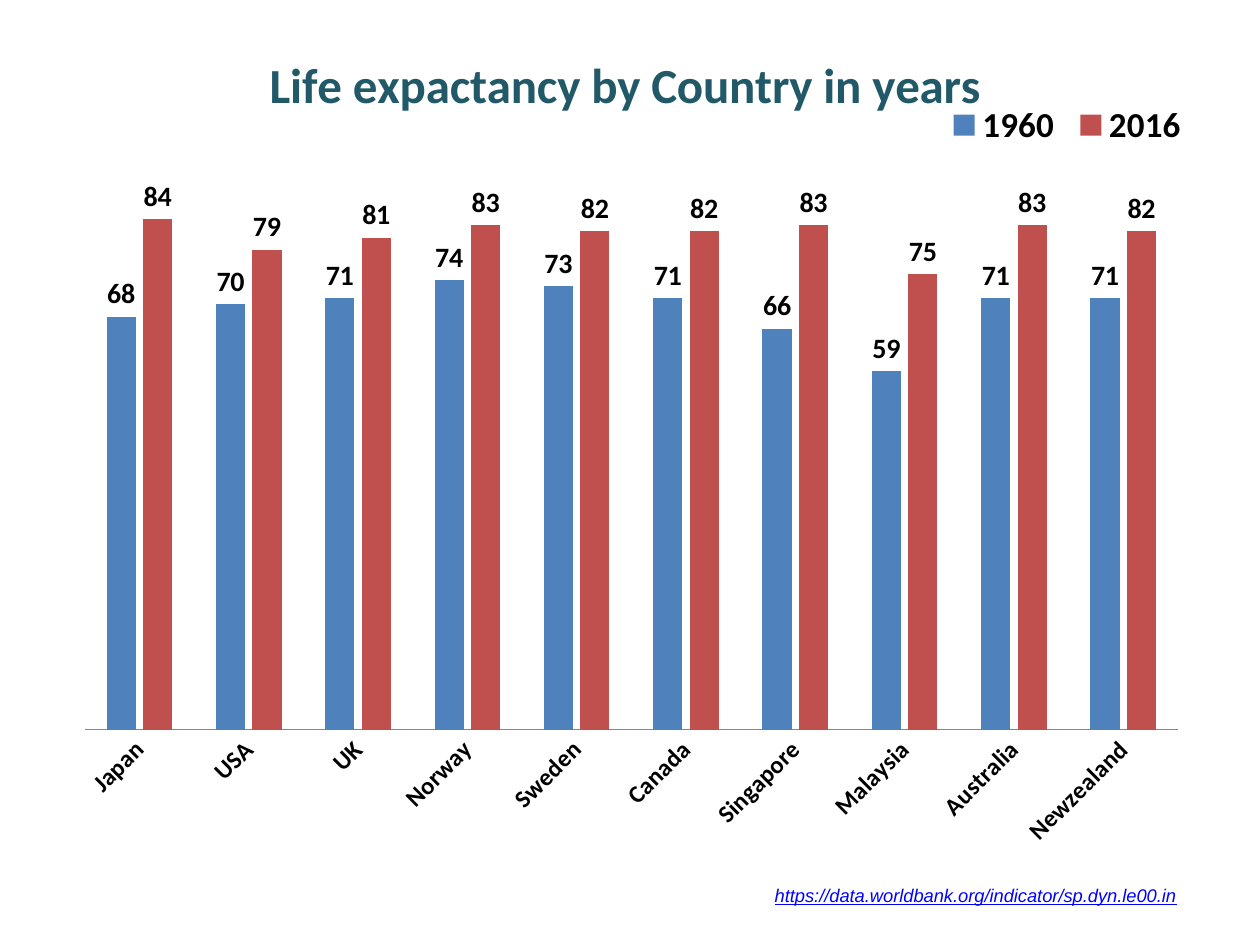
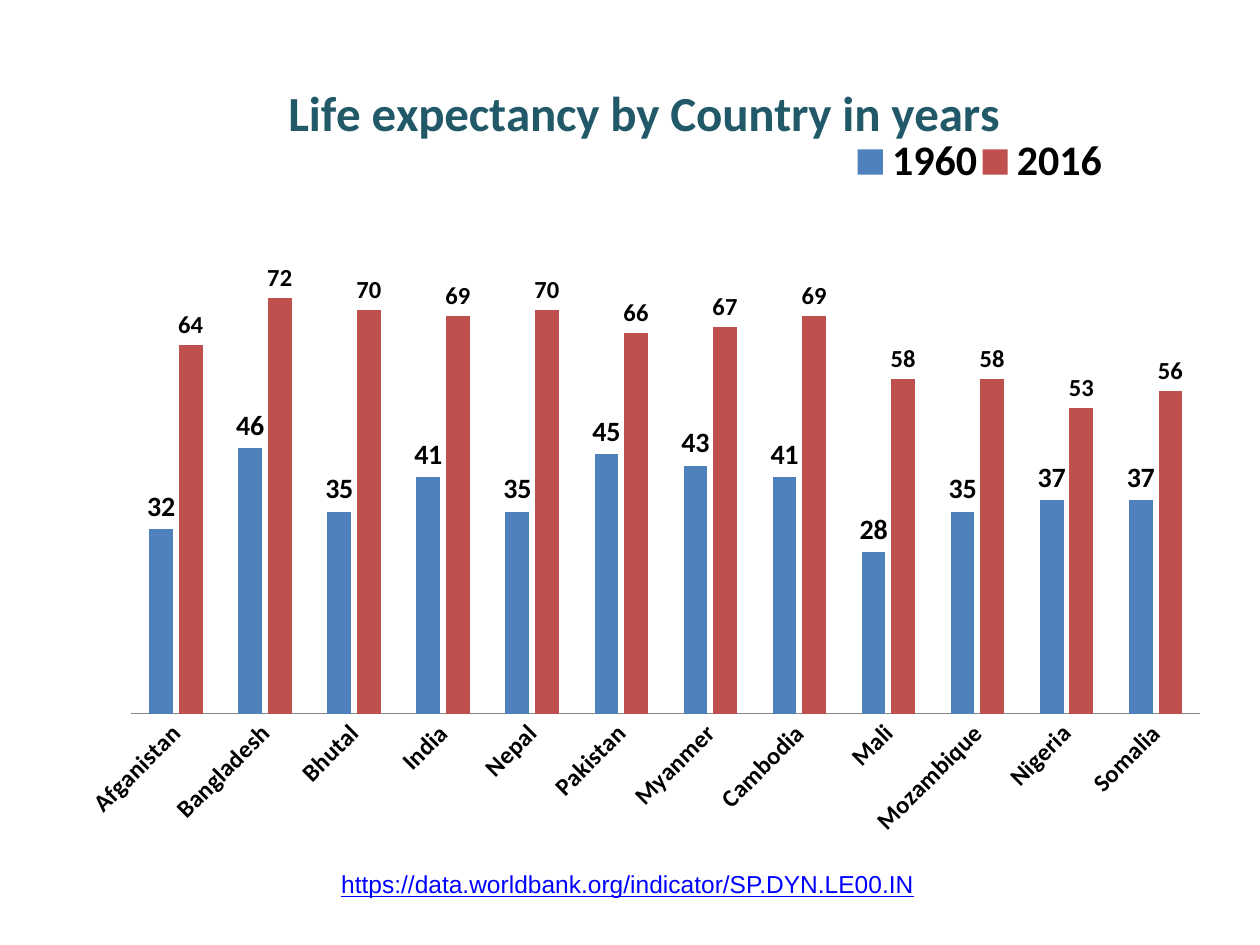
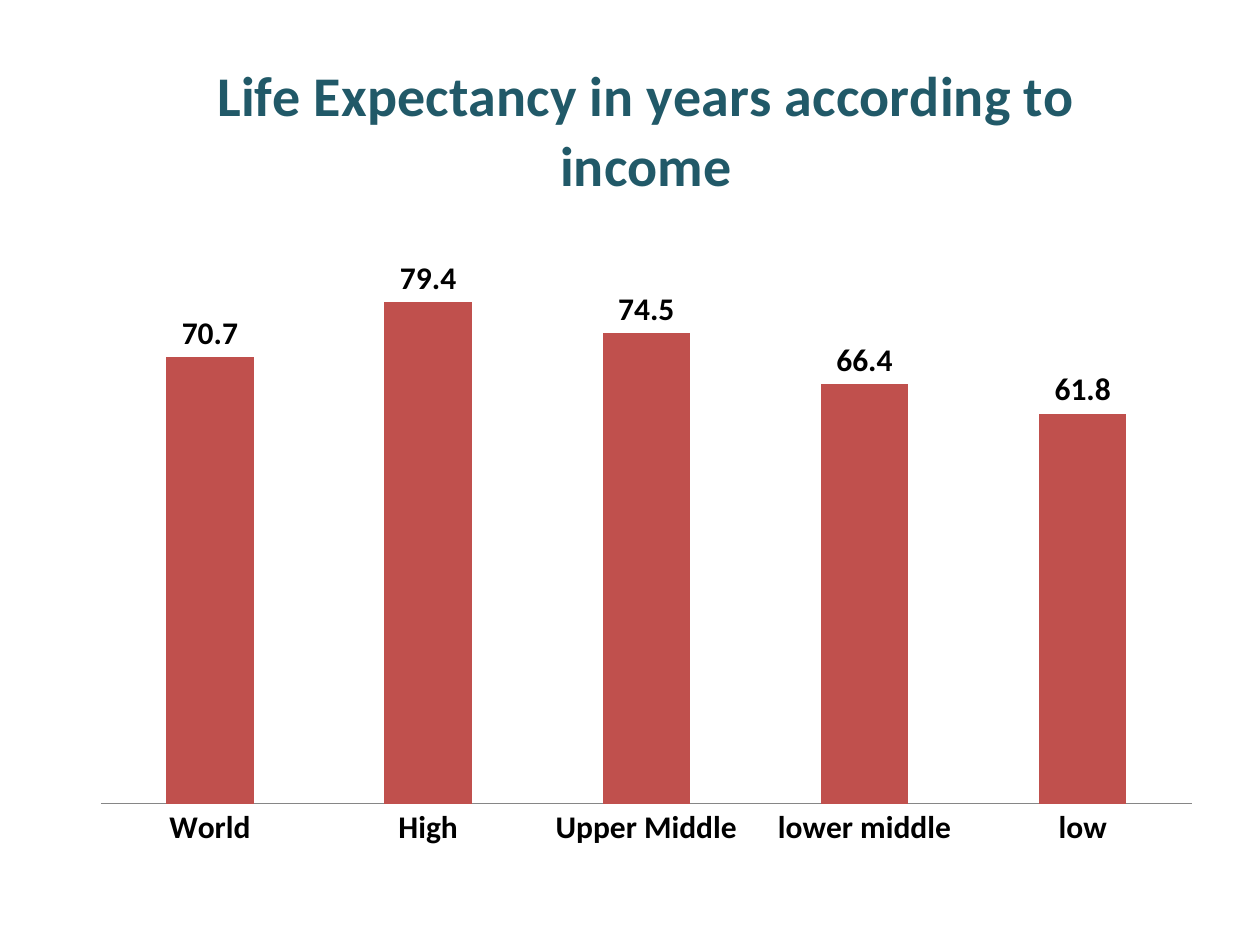
from lxml import etree
from pptx import Presentation
from pptx.chart.data import CategoryChartData
from pptx.dml.color import RGBColor
from pptx.enum.chart import (XL_CHART_TYPE, XL_LABEL_POSITION,
                             XL_LEGEND_POSITION, XL_TICK_MARK)
from pptx.oxml.ns import qn
from pptx.util import Inches, Pt

COLUMNS = XL_CHART_TYPE.COLUMN_CLUSTERED
ABOVE_BAR = XL_LABEL_POSITION.OUTSIDE_END
LEGEND_TOP = XL_LEGEND_POSITION.TOP
NO_TICKS = XL_TICK_MARK.NONE

BLUE, RED, TEAL = "4F81BD", "C0504D", "215968"
BLACK, GREY, LINK_BLUE = "000000", "868686", "0000FF"
CHART_FONT, SOURCE_FONT = "Calibri", "Arial"
BLANK_LAYOUT = 6

# Content: "at" is in inches; "plot" and "legend" are fractions of the chart.
# Each series is (name, values, colour, label size).
SLIDES = [
    {
        "title": "Life expactancy by Country in years", "title_size": 28,
        "at": (0.34, 0.15, 9.24, 6.71), "plot": (0.036, 0.194, 0.939, 0.647),
        "axis_max": 90, "axis_size": 14, "slanted": True,
        "legend": (0.77, 0.1, 0.22, 0.05), "legend_size": 20,
        "categories": ["Japan", "USA", "UK", "Norway", "Sweden", "Canada",
                       "Singapore", "Malaysia", "Australia", "Newzealand"],
        "series": [
            ("1960", [68, 70, 71, 74, 73, 71, 66, 59, 71, 71], BLUE, 16),
            ("2016", [84, 79, 81, 83, 82, 82, 83, 75, 83, 82], RED, 16),
        ],
        "source": {"text": "https://data.worldbank.org/indicator/sp.dyn.le00.in",
                   "at": (6.05, 6.97, 3.45, 0.28), "size": 10.5,
                   "italic": True, "wrap": False},
    },
    {
        "title": "Life expectancy by Country in years", "title_size": 28,
        "at": (0.51, 0.38, 9.2, 6.39), "plot": (0.058, 0.254, 0.922, 0.573),
        "axis_max": 80, "axis_size": 14, "slanted": True,
        "legend": (0.68, 0.11, 0.22, 0.06), "legend_size": 24,
        "categories": ["Afganistan", "Bangladesh", "Bhutal", "India", "Nepal",
                       "Pakistan", "Myanmer", "Cambodia", "Mali", "Mozambique",
                       "Nigeria", "Somalia"],
        "series": [
            ("1960", [32, 46, 35, 41, 35, 45, 43, 41, 28, 35, 37, 37], BLUE, 16),
            ("2016", [64, 72, 70, 69, 70, 66, 67, 69, 58, 58, 53, 56], RED, 14),
        ],
        "source": {"text": "https://data.worldbank.org/indicator/SP.DYN.LE00.IN",
                   "at": (2.61, 6.85, 5, 0.34), "size": 14,
                   "italic": False, "wrap": True},
    },
    {
        "title": "Life Expectancy in years according to income", "title_size": 32,
        "at": (0.62, 0.18, 9.02, 6.68), "plot": (0.02, 0.253, 0.96, 0.675),
        "axis_max": 90, "axis_size": 18, "slanted": False,
        "categories": ["World", "High", "Upper Middle", "lower middle", "low"],
        "series": [("Series 1", [70.7, 79.4, 74.5, 66.4, 61.8], RED, 18)],
    },
]


def color(value):
    return RGBColor.from_string(value)


def style_font(font, size, tint=BLACK, name=CHART_FONT, bold=True):
    font.name, font.size, font.bold = name, Pt(size), bold
    font.color.rgb = color(tint)


def make_layout(fractions, inner=False):
    """Manual chart layout from left, top, width and height fractions."""
    layout = etree.Element(qn("c:layout"))
    manual = etree.SubElement(layout, qn("c:manualLayout"))
    settings = [("layoutTarget", "inner")] if inner else []
    settings += [("xMode", "edge"), ("yMode", "edge")]
    settings += zip("xywh", fractions)
    for tag, value in settings:
        etree.SubElement(manual, qn("c:" + tag)).set("val", str(value))
    return layout


def drop_layout(parent):
    for layout in parent.findall(qn("c:layout")):
        parent.remove(layout)


def add_legend(chart, fractions, size):
    chart.has_legend = True
    legend = chart.legend
    legend.position = LEGEND_TOP
    legend.include_in_layout = False
    style_font(legend.font, size)
    element = legend._element
    drop_layout(element)
    element.find(qn("c:legendPos")).addnext(make_layout(fractions))


def style_axes(chart, content):
    values = chart.value_axis
    values.visible = False
    values.has_major_gridlines = False
    values.minimum_scale, values.maximum_scale = 0, content["axis_max"]

    names = chart.category_axis
    names.major_tick_mark = names.minor_tick_mark = NO_TICKS
    names.format.line.color.rgb = color(GREY)
    names.format.line.width = Pt(0.75)
    style_font(names.tick_labels.font, content["axis_size"])
    if content["slanted"]:
        body = names._element.find(qn("c:txPr")).find(qn("a:bodyPr"))
        body.set("rot", str(-45 * 60000))
        body.set("vert", "horz")


def add_column_chart(page, content):
    data = CategoryChartData()
    data.categories = content["categories"]
    for name, values, _, _ in content["series"]:
        data.add_series(name, values)
    place = map(Inches, content["at"])
    chart = page.shapes.add_chart(COLUMNS, *place, data).chart
    style_font(chart.font, 10, bold=False)

    # Title
    chart.has_title = True
    span = chart.chart_title.text_frame.paragraphs[0].add_run()
    span.text = content["title"]
    style_font(span.font, content["title_size"], TEAL)

    # Columns and their labels
    plot = chart.plots[0]
    plot.gap_width, plot.overlap, plot.vary_by_categories = 150, -25, False
    for series, (_, _, tint, size) in zip(plot.series, content["series"]):
        series.format.fill.solid()
        series.format.fill.fore_color.rgb = color(tint)
        labels = series.data_labels
        labels.show_value = True
        labels.position = ABOVE_BAR
        style_font(labels.font, size)

    # Axes, legend and plot area
    style_axes(chart, content)
    chart.has_legend = False
    if "legend" in content:
        add_legend(chart, content["legend"], content["legend_size"])
    area = chart._chartSpace.find(qn("c:chart")).find(qn("c:plotArea"))
    drop_layout(area)
    area.insert(0, make_layout(content["plot"], inner=True))


def add_source(page, source):
    box = page.shapes.add_textbox(*map(Inches, source["at"]))
    box.text_frame.word_wrap = source["wrap"]
    span = box.text_frame.paragraphs[0].add_run()
    span.text = source["text"]
    style_font(span.font, source["size"], LINK_BLUE, SOURCE_FONT, bold=False)
    span.font.italic, span.font.underline = source["italic"], True


def main():
    deck = Presentation()
    deck.slide_width, deck.slide_height = Inches(10), Inches(7.5)
    for content in SLIDES:
        page = deck.slides.add_slide(deck.slide_layouts[BLANK_LAYOUT])
        add_column_chart(page, content)
        if "source" in content:
            add_source(page, content["source"])
    deck.save("out.pptx")


if __name__ == "__main__":
    main()
